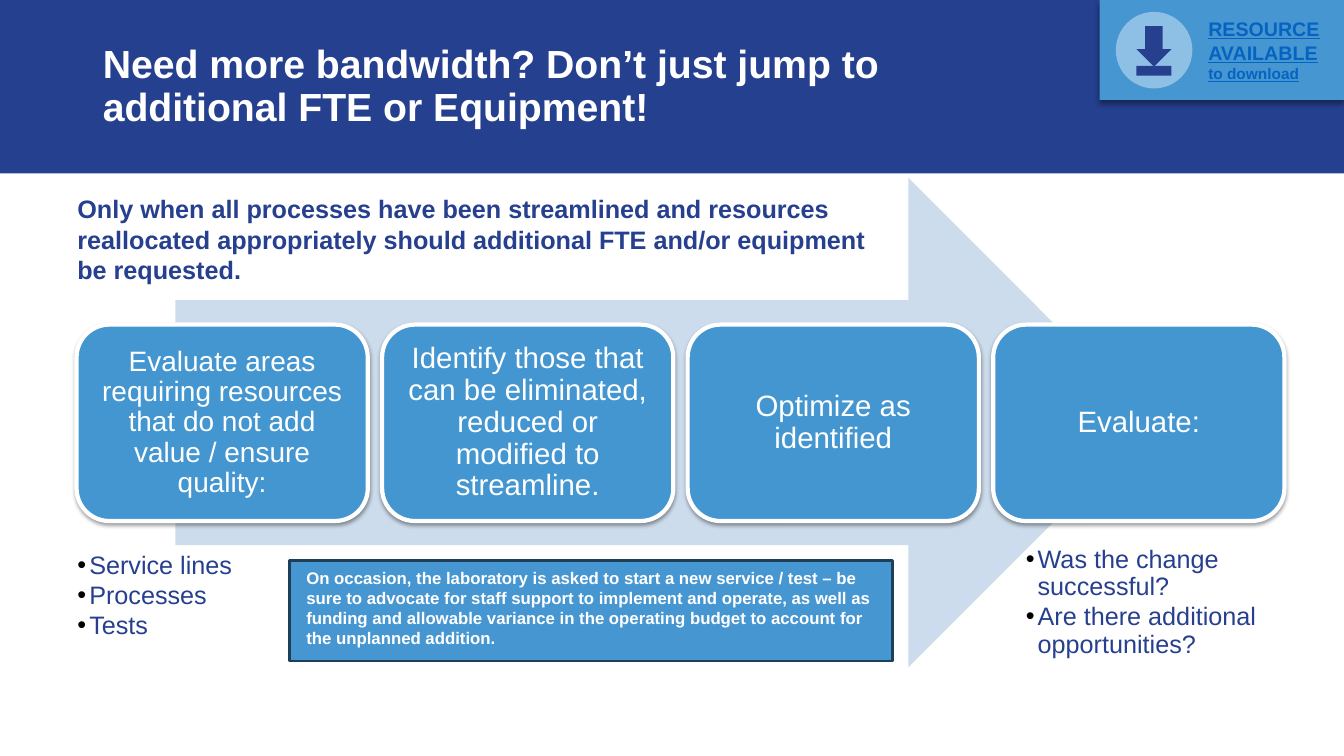
import lxml.etree
import pptx
import pptx.dml.color
import pptx.enum.shapes
import pptx.enum.text
import pptx.oxml.ns
import pptx.util

Cm, Pt = pptx.util.Cm, pptx.util.Pt
SHAPE = pptx.enum.shapes.MSO_SHAPE
ALIGN = pptx.enum.text.PP_ALIGN
ANCHOR = pptx.enum.text.MSO_ANCHOR
qn = pptx.oxml.ns.qn

NAVY, BLUE, CARD_BLUE, WHITE = "26408F", "4696D2", "4496D1", "FFFFFF"
BOX_INSETS = (0.25, 0.13, 0.25, 0.13)


def color(hex_text):
    return pptx.dml.color.RGBColor.from_string(hex_text)


def set_all(obj, values):
    for name, value in values.items():
        setattr(obj, name, value)


def style_font(font, size, hex_text, bold=False, underline=False):
    set_all(font, {"name": "Arial", "size": Pt(size), "bold": bold, "underline": underline})
    font.color.rgb = color(hex_text)


def style_frame(tf, anchor=ANCHOR.TOP, insets=BOX_INSETS):
    left, top, right, bottom = insets
    set_all(tf, {
        "word_wrap": True, "auto_size": pptx.enum.text.MSO_AUTO_SIZE.NONE,
        "vertical_anchor": anchor,
        "margin_left": Cm(left), "margin_top": Cm(top),
        "margin_right": Cm(right), "margin_bottom": Cm(bottom),
    })


def add_lines(p, lines, hex_text, **flags):
    """Write (text, size) lines into one paragraph, split by line breaks."""
    for i, (text, size) in enumerate(lines):
        if i:
            p.add_line_break()
        r = p.add_run()
        r.text = text
        style_font(r.font, size, hex_text, **flags)


def add_shape(s, kind, box, fill, line=None, width=0, shadow=None):
    sp = s.shapes.add_shape(kind, *map(Cm, box))
    sp.fill.solid()
    sp.fill.fore_color.rgb = color(fill)
    if line:
        sp.line.color.rgb = color(line)
        sp.line.width = Pt(width)
    else:
        sp.line.fill.background()
    sp.shadow.inherit = False
    if shadow:
        opacity, blur, dist = shadow
        effects = sp.element.spPr.find(qn("a:effectLst"))
        outer = lxml.etree.SubElement(effects, qn("a:outerShdw"), {
            "blurRad": str(Pt(blur)), "dist": str(Pt(dist)),
            "dir": "5400000", "algn": "t", "rotWithShape": "0"})
        black = lxml.etree.SubElement(outer, qn("a:srgbClr"), val="000000")
        lxml.etree.SubElement(black, qn("a:alpha"), val=str(opacity * 1000))
    return sp


def add_textbox(s, box, lines, hex_text, **flags):
    tf = s.shapes.add_textbox(*map(Cm, box)).text_frame
    style_frame(tf)
    add_lines(tf.paragraphs[0], lines, hex_text, **flags)


def place(s, sp, box):
    """Move a placeholder to its box, in front of what is drawn so far."""
    set_all(sp, dict(zip(("left", "top", "width", "height"), map(Cm, box))))
    s.shapes.element.append(sp.element)


def add_header(s, box):
    x, y, w, h = box
    add_shape(s, SHAPE.RECTANGLE, box, "25408F")
    title = s.shapes.title
    place(s, title, (x + 2.34, y + 0.36, w - 4.66, 3.68))
    style_frame(title.text_frame, ANCHOR.MIDDLE)
    p = title.text_frame.paragraphs[0]
    set_all(p, {"alignment": ALIGN.LEFT, "line_spacing": 0.9})
    add_lines(p, [("Need more bandwidth? Don’t just jump to", 28),
                  ("additional FTE or Equipment!", 28)], WHITE, bold=True)


def add_badge(s, box):
    x, y, w, h = box
    add_shape(s, SHAPE.RECTANGLE, box, BLUE, shadow=(40, 4, 3))
    add_textbox(s, (x + 2.49, y + 0.3, 3.43, 1.93),
                [("RESOURCE AVAILABLE", 14), ("to download", 11)],
                "0563C1", bold=True, underline=True)
    # Download icon
    add_shape(s, SHAPE.OVAL, (x + 0.41, y + 0.3, 1.93, 1.93), "8EBFE4")
    add_shape(s, SHAPE.DOWN_ARROW, (x + 0.93, y + 0.66, 0.88, 1.02), NAVY)
    add_shape(s, SHAPE.RECTANGLE, (x + 0.93, y + 1.66, 0.88, 0.25), NAVY)


def add_process(s, box, steps, gap=0.36):
    x, y, w, h = box
    add_shape(s, SHAPE.RIGHT_ARROW, (x + 2.49, y - 3.7, 24.64, 12.34), "CDDCEC")
    card_w = (w - gap * (len(steps) - 1)) / len(steps)
    for i, (text, size) in enumerate(steps):
        sp = add_shape(s, SHAPE.ROUNDED_RECTANGLE, (x + i * (card_w + gap), y, card_w, h),
                       CARD_BLUE, WHITE, 3, shadow=(38, 3.1, 1.6))
        style_frame(sp.text_frame, ANCHOR.MIDDLE, (0.22,) * 4)
        p = sp.text_frame.paragraphs[0]
        set_all(p, {"alignment": ALIGN.CENTER, "line_spacing": 0.9})
        add_lines(p, [(text, size)], WHITE)


def add_bullets(s, sp, box, items):
    place(s, sp, box)
    tf = sp.text_frame
    style_frame(tf)
    for i, item in enumerate(items):
        p = tf.add_paragraph() if i else tf.paragraphs[0]
        pPr = p._p.get_or_add_pPr()
        pPr.set("marL", str(Cm(0.3)))
        pPr.set("indent", str(-Cm(0.3)))
        bullet_color = lxml.etree.SubElement(pPr, qn("a:buClr"))
        lxml.etree.SubElement(bullet_color, qn("a:srgbClr"), val="000000")
        lxml.etree.SubElement(pPr, qn("a:buFont"), typeface="Arial")
        lxml.etree.SubElement(pPr, qn("a:buChar"), char="•")
        set_all(p, {"line_spacing": 0.9, "space_before": Pt(2.2 if i else 0),
                    "space_after": Pt(0)})
        add_lines(p, [(item, 18)], NAVY)


def add_note(s, box, text):
    sp = add_shape(s, SHAPE.RECTANGLE, box, BLUE, "1D3F58", 2)
    style_frame(sp.text_frame, insets=(0.43, 0.18, 0.1, 0.1))
    p = sp.text_frame.paragraphs[0]
    p.alignment = ALIGN.LEFT
    add_lines(p, [(text, 12)], WHITE, bold=True)


def main():
    prs = pptx.Presentation()
    set_all(prs, {"slide_width": Cm(33.87), "slide_height": Cm(19.05)})
    s = prs.slides.add_slide(prs.slide_layouts[3])
    areas, checks = s.placeholders[1], s.placeholders[2]

    # Header band and download badge
    add_header(s, (0, 0, 33.87, 4.37))
    add_badge(s, (27.71, 0, 6.16, 2.52))

    # Lead statement
    add_textbox(s, (1.7, 4.75, 21.16, 3.18), [(
        "Only when all processes have been streamlined and resources reallocated "
        "appropriately should additional FTE and/or equipment be requested.", 18)],
        NAVY, bold=True)

    # Four steps on the arrow
    add_process(s, (1.93, 8.18, 30.44, 4.95), [
        ("Evaluate areas requiring resources that do not add value / ensure quality:", 20),
        ("Identify those that can be eliminated, reduced or modified to streamline.", 21),
        ("Optimize as identified", 21),
        ("Evaluate:", 21),
    ])

    # Details below the steps
    add_note(s, (7.29, 14.12, 15.21, 2.54),
             "On occasion, the laboratory is asked to start a new service / test – be sure "
             "to advocate for staff support to implement and operate, as well as funding and "
             "allowable variance in the operating budget to account for the unplanned addition.")
    add_bullets(s, areas, (1.7, 13.79, 6.58, 3.07), ["Service lines", "Processes", "Tests"])
    add_bullets(s, checks, (25.6, 13.64, 6.58, 3.71),
                ["Was the change successful?", "Are there additional opportunities?"])

    prs.save("out.pptx")


if __name__ == "__main__":
    main()
